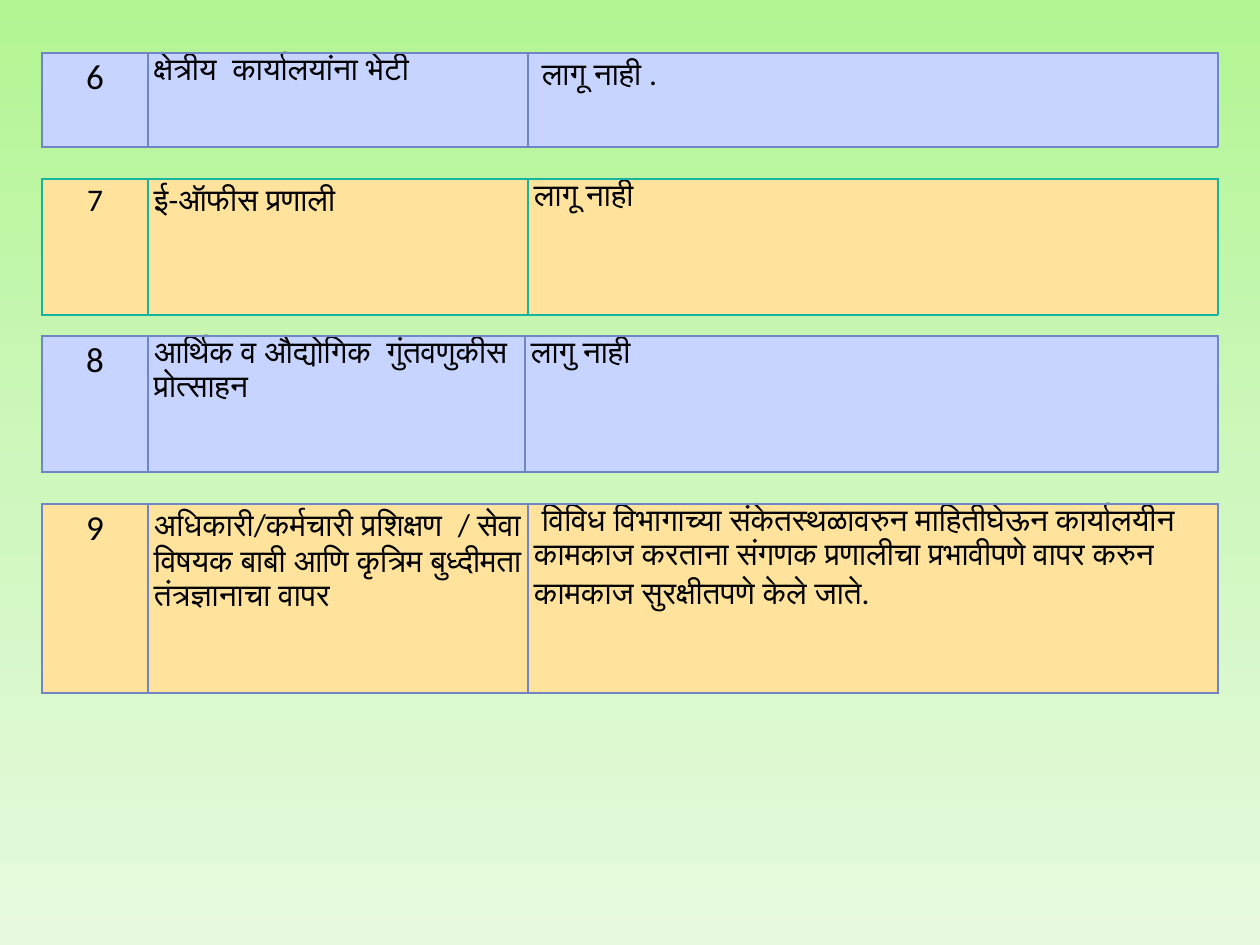
from copy import deepcopy

from lxml import etree
from pptx import Presentation
from pptx.dml.color import RGBColor
from pptx.enum.text import PP_ALIGN
from pptx.oxml.ns import qn
from pptx.util import Emu, Pt

CENTER, LEFT = PP_ALIGN.CENTER, PP_ALIGN.LEFT
BLACK = RGBColor(0x00, 0x00, 0x00)
BLUE = RGBColor(0xC6, 0xD4, 0xFF)
YELLOW = RGBColor(0xFF, 0xE3, 0x9D)
INDIGO = RGBColor(0x6E, 0x86, 0xC6)
TEAL = RGBColor(0x16, 0xB3, 0x9E)
BACKGROUND = (
    RGBColor(0xB2, 0xF5, 0x92),
    RGBColor(0xCE, 0xF7, 0xBD),
    RGBColor(0xE7, 0xFA, 0xDF),
)
WIDTH, HEIGHT = 1260, 945
MARGIN = 42
NUMBER_WIDTH = 106
TOPIC_WIDTH = 380
EMU_PER_PX = 914400 / 126


def px(length):
    return Emu(round(length * EMU_PER_PX))


def write(frame, text, size=18, align=LEFT, font="Calibri", color=BLACK):
    paragraph = frame.paragraphs[0]
    paragraph.alignment = align
    paragraph.line_spacing = 1.07
    run = paragraph.add_run()
    run.text = text
    run.font.size = Pt(size)
    run.font.name = font
    run.font.color.rgb = color


class SlideBuilder:
    def __init__(self, slide):
        self.slide = slide
        self.border_width = Pt(0.75)
        self.inset = px(6)

    def background(self, colors):
        fill = self.slide.background.fill
        fill.gradient()
        fill.gradient_angle = 270
        stops = self.slide.element.find(".//" + qn("a:gsLst"))
        stops.insert(1, deepcopy(stops[0]))
        for index, (stop, color) in enumerate(zip(fill.gradient_stops, colors)):
            stop.color.rgb = color
            stop.position = index / (len(colors) - 1)

    def border(self, cell, color):
        properties = cell._tc.get_or_add_tcPr()
        for index, side in enumerate(("lnL", "lnR", "lnT", "lnB")):
            line = etree.Element(qn("a:" + side), w=str(self.border_width))
            solid = etree.SubElement(line, qn("a:solidFill"))
            etree.SubElement(solid, qn("a:srgbClr"), val=str(color))
            properties.insert(index, line)

    def item(self, top, height, texts, fill, line,
             number_size=20, topic_width=TOPIC_WIDTH):
        width = WIDTH - 2 * MARGIN
        table = self.slide.shapes.add_table(
            1, 3, px(MARGIN), px(top), px(width), px(height)).table
        widths = (NUMBER_WIDTH, topic_width, width - NUMBER_WIDTH - topic_width)
        formats = ({"size": number_size, "align": CENTER}, {}, {})
        for column, cell, column_width, text, style in zip(
                table.columns, table.rows[0].cells, widths, texts, formats):
            column.width = px(column_width)
            cell.margin_left = cell.margin_right = self.inset
            cell.margin_top = cell.margin_bottom = 0
            cell.fill.solid()
            cell.fill.fore_color.rgb = fill
            self.border(cell, line)
            write(cell.text_frame, text, **style)


def main():
    presentation = Presentation()
    presentation.slide_width, presentation.slide_height = px(WIDTH), px(HEIGHT)
    blank = presentation.slide_layouts[6]
    builder = SlideBuilder(presentation.slides.add_slide(blank))
    builder.background(BACKGROUND)
    builder.item(53, 94, ("6", "क्षेत्रीय  कार्यालयांना भेटी", " लागू नाही ."),
                 BLUE, INDIGO)
    builder.item(179, 136, ("7", "ई-ऑफीस प्रणाली", "लागू नाही"),
                 YELLOW, TEAL, number_size=18)
    builder.item(336, 136,
                 ("8", "आर्थिक व औद्योगिक  गुंतवणुकीस प्रोत्साहन", "लागु नाही"),
                 BLUE, INDIGO, topic_width=377)
    builder.item(504, 189, (
        "9",
        "अधिकारी/कर्मचारी प्रशिक्षण  / सेवा विषयक बाबी आणि कृत्रिम "
        "बुध्दीमता तंत्रज्ञानाचा वापर",
        " विविध विभागाच्या संकेतस्थळावरुन माहितीघेऊन कार्यालयीन कामकाज "
        "करताना संगणक प्रणालीचा प्रभावीपणे वापर करुन कामकाज "
        "सुरक्षीतपणे केले जाते.",
    ), YELLOW, INDIGO)
    presentation.save("out.pptx")


if __name__ == "__main__":
    main()
